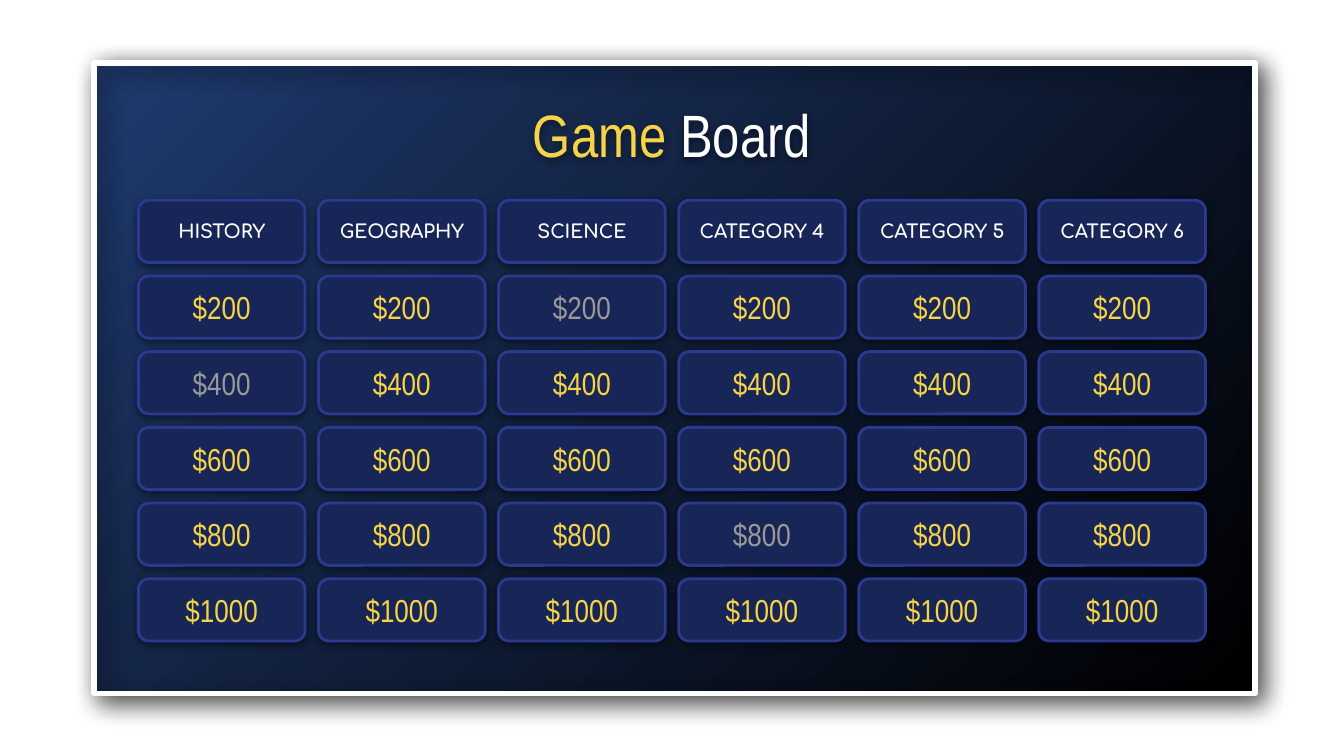
from dataclasses import dataclass

from lxml.etree import SubElement
from pptx import Presentation
from pptx.dml.color import RGBColor
from pptx.enum.shapes import MSO_SHAPE as Shape
from pptx.enum.text import MSO_ANCHOR as Anchor, MSO_AUTO_SIZE as AutoSize, PP_ALIGN as Align
from pptx.oxml.ns import qn
from pptx.util import Inches, Pt

WHITE = RGBColor(0xFF, 0xFF, 0xFF)
BLACK = RGBColor(0x00, 0x00, 0x00)
BLUE = RGBColor(0x1F, 0x3A, 0x6E)
NAVY = RGBColor(0x17, 0x26, 0x56)
INDIGO = RGBColor(0x2B, 0x39, 0x90)
YELLOW = RGBColor(0xF7, 0xD3, 0x47)
GRAY = RGBColor(0x99, 0x99, 0x99)

CATEGORIES = ["HISTORY", "GEOGRAPHY", "SCIENCE", "CATEGORY 4", "CATEGORY 5", "CATEGORY 6"]
VALUES = ["$200", "$400", "$600", "$800", "$1000"]
USED = {(0, "$400"), (2, "$200"), (3, "$800")}  # column and value already played


@dataclass(frozen=True)
class Grid:
    left: float
    top: float
    width: float
    height: float
    cols: int
    rows: int
    gap: float

    def cell(self, col: int, row: int) -> tuple:
        w = (self.width - self.gap * (self.cols - 1)) / self.cols
        h = (self.height - self.gap * (self.rows - 1)) / self.rows
        return self.left + col * (w + self.gap), self.top + row * (h + self.gap), w, h


@dataclass(frozen=True)
class Shadow:
    blur: float
    distance: float
    angle: int
    opacity: int


@dataclass(frozen=True)
class TextStyle:
    font: str
    size: int
    color: RGBColor
    bold: bool = False


GRID = Grid(1.03, 1.49, 7.94, 3.28, len(CATEGORIES), len(VALUES) + 1, 0.1)
PANEL_SHADOW = Shadow(13.5, 5.2, 45, 80)
SOFT_SHADOW = Shadow(4.5, 1.5, 90, 50)
HEADER = TextStyle("Comfortaa", 10, WHITE, True)
OPEN = TextStyle("Arial Narrow", 17, YELLOW)
PLAYED = TextStyle("Arial Narrow", 17, GRAY)


def add_shadow(sp, shadow: Shadow) -> None:
    sp.shadow.inherit = False
    effects = sp._element.spPr.find(qn("a:effectLst"))
    outer = SubElement(effects, qn("a:outerShdw"), blurRad=str(Pt(shadow.blur)),
                       dist=str(Pt(shadow.distance)), dir=str(shadow.angle * 60000),
                       algn="bl", rotWithShape="0")
    color = SubElement(outer, qn("a:srgbClr"), val=str(BLACK))
    SubElement(color, qn("a:alpha"), val=str(shadow.opacity * 1000))


def style_run(r, style: TextStyle) -> None:
    r.font.name = style.font
    r.font.size = Pt(style.size)
    r.font.bold = style.bold
    r.font.color.rgb = style.color


def add_panel(s) -> None:
    group = s.shapes.add_group_shape()
    panel = group.shapes.add_shape(Shape.RECTANGLE, *map(Inches, (0.71, 0.47, 8.62, 4.68)))
    panel.fill.gradient()
    panel.fill.gradient_angle = 315
    for stop, color, position in zip(panel.fill.gradient_stops, (BLUE, BLACK), (0, 1)):
        stop.color.rgb = color
        stop.position = position
    panel.line.fill.background()
    frame = group.shapes.add_shape(Shape.RECTANGLE, *map(Inches, (0.7, 0.47, 8.64, 4.69)))
    frame.fill.background()
    frame.line.color.rgb = WHITE
    frame.line.width = Pt(3)
    for sp in (panel, frame):
        add_shadow(sp, PANEL_SHADOW)


def add_title(s) -> None:
    sp = s.shapes.add_textbox(*map(Inches, (3.83, 0.73, 2.34, 0.54)))
    add_shadow(sp, SOFT_SHADOW)
    tf = sp.text_frame
    tf.word_wrap = True
    tf.auto_size = AutoSize.SHAPE_TO_FIT_TEXT
    tf.margin_left = tf.margin_right = tf.margin_top = tf.margin_bottom = 0
    p = tf.paragraphs[0]
    p.alignment = Align.CENTER
    for text, color in (("Game ", YELLOW), ("Board", WHITE)):
        r = p.add_run()
        r.text = text
        style_run(r, TextStyle("Arial Narrow", 32, color))


def add_tile(s, col: int, row: int, text: str, style: TextStyle) -> None:
    sp = s.shapes.add_shape(Shape.ROUNDED_RECTANGLE, *map(Inches, GRID.cell(col, row)))
    sp.adjustments[0] = 0.17
    sp.fill.solid()
    sp.fill.fore_color.rgb = NAVY
    sp.line.color.rgb = INDIGO
    sp.line.width = Pt(1.5)
    add_shadow(sp, SOFT_SHADOW)
    tf = sp.text_frame
    tf.margin_left = tf.margin_right = tf.margin_top = tf.margin_bottom = Inches(0.1)
    tf.vertical_anchor = Anchor.MIDDLE
    tf.text = text
    p = tf.paragraphs[0]
    p.alignment = Align.CENTER
    style_run(p.runs[0], style)


def main() -> None:
    prs = Presentation()
    prs.slide_width = Inches(10)
    prs.slide_height = prs.slide_width * 9 // 16
    s = prs.slides.add_slide(prs.slide_layouts[6])
    add_panel(s)
    add_title(s)
    for col, category in enumerate(CATEGORIES):
        add_tile(s, col, 0, category, HEADER)
        for row, value in enumerate(VALUES, start=1):
            add_tile(s, col, row, value, PLAYED if (col, value) in USED else OPEN)
    prs.save("out.pptx")


if __name__ == "__main__":
    main()
